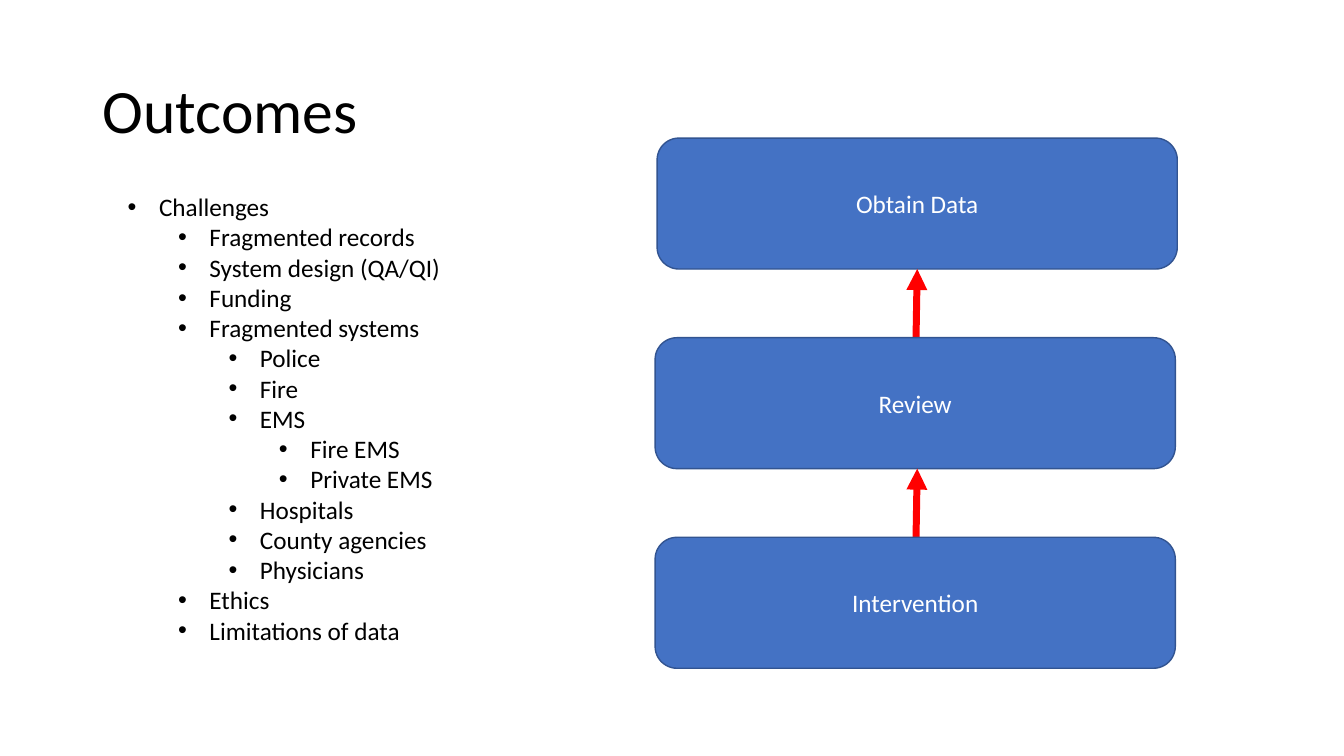
import pptx
import pptx.dml.color
import pptx.enum.shapes
import pptx.enum.text
import pptx.oxml.ns
import pptx.oxml.xmlchemy
import pptx.util

Cm = pptx.util.Cm
Pt = pptx.util.Pt
ANCHOR = pptx.enum.text.MSO_ANCHOR
ALIGN = pptx.enum.text.PP_ALIGN

COLOURS = {
    "text": "000000",
    "step": "4472C4",
    "step_line": "325491",
    "step_text": "FFFFFF",
    "arrow": "FF0000",
}
CHALLENGES = [
    (0, "Challenges"),
    (1, "Fragmented records"),
    (1, "System design (QA/QI)"),
    (1, "Funding"),
    (1, "Fragmented systems"),
    (2, "Police"),
    (2, "Fire"),
    (2, "EMS"),
    (3, "Fire EMS"),
    (3, "Private EMS"),
    (2, "Hospitals"),
    (2, "County agencies"),
    (2, "Physicians"),
    (1, "Ethics"),
    (1, "Limitations of data"),
]
STEPS = [("Obtain Data", 0.05), ("Review", 0), ("Intervention", 0)]


def colour(name):
    return pptx.dml.color.RGBColor.from_string(COLOURS[name])


def add_element(parent, tag, **attributes):
    element = pptx.oxml.xmlchemy.OxmlElement(tag)
    for name, value in attributes.items():
        element.set(name, str(value))
    parent.append(element)


def write(para, text, size=18, ink="text", align=ALIGN.LEFT, spacing=1.0):
    para.alignment = align
    para.line_spacing = spacing
    span = para.add_run()
    span.text = text
    span.font.size = Pt(size)
    span.font.name = "Calibri"
    span.font.color.rgb = colour(ink)


def add_bullet(para, level):
    para.level = level
    properties = para._p.get_or_add_pPr()
    properties.set("marL", str(Cm(0.79 + 1.27 * level)))
    properties.set("indent", str(Cm(-0.79)))
    add_element(properties, "a:buFont", typeface="Arial")
    add_element(properties, "a:buChar", char="•")


def add_text_frame(page, left, top, width, height, anchor):
    box = page.shapes.add_textbox(Cm(left), Cm(top), Cm(width), Cm(height))
    frame = box.text_frame
    frame.word_wrap = True
    frame.vertical_anchor = anchor
    return frame


def draw_title(page, left, top, width, height):
    frame = add_text_frame(page, left, top, width, height, ANCHOR.MIDDLE)
    write(frame.paragraphs[0], "Outcomes", size=44, spacing=0.9)


def draw_challenges(page, left, top, width, height):
    frame = add_text_frame(page, left, top, width, height, ANCHOR.TOP)
    frame.auto_size = pptx.enum.text.MSO_AUTO_SIZE.SHAPE_TO_FIT_TEXT
    for index, (level, text) in enumerate(CHALLENGES):
        para = frame.add_paragraph() if index else frame.paragraphs[0]
        write(para, text)
        add_bullet(para, level)


def draw_step(page, text, left, top, width, height):
    box = page.shapes.add_shape(
        pptx.enum.shapes.MSO_SHAPE.FLOWCHART_ALTERNATE_PROCESS,
        Cm(left), Cm(top), Cm(width), Cm(height))
    box.shadow.inherit = False
    box.fill.solid()
    box.fill.fore_color.rgb = colour("step")
    box.line.color.rgb = colour("step_line")
    box.line.width = Pt(1)
    box.text_frame.vertical_anchor = ANCHOR.MIDDLE
    write(box.text_frame.paragraphs[0], text, ink="step_text", align=ALIGN.CENTER)


def draw_arrow(page, start_x, start_y, end_x, end_y):
    arrow = page.shapes.add_connector(
        pptx.enum.shapes.MSO_CONNECTOR.STRAIGHT,
        Cm(start_x), Cm(start_y), Cm(end_x), Cm(end_y))
    arrow.line.color.rgb = colour("arrow")
    arrow.line.width = Pt(5)
    properties = arrow._element.find(pptx.oxml.ns.qn("p:spPr"))
    add_element(properties.find(pptx.oxml.ns.qn("a:ln")), "a:tailEnd", type="triangle")
    add_element(properties, "a:effectLst")


def draw_steps(page, left, top, width, height):
    step_height = 3.3
    pitch = (height - step_height) / (len(STEPS) - 1)
    middle = left + width / 2
    for index, (text, shift) in enumerate(STEPS):
        step_top = top + index * pitch
        if index:
            draw_arrow(page, middle + 0.02, step_top,
                       middle + 0.05, step_top - pitch + step_height)
        draw_step(page, text, left + shift, step_top, width, step_height)


def main():
    deck = pptx.Presentation()
    deck.slide_width = Cm(33.87)
    deck.slide_height = Cm(19.05)
    page = deck.slides.add_slide(deck.slide_layouts[6])
    draw_title(page, 2.34, 1.02, 29.21, 3.68)
    draw_steps(page, 16.51, 3.48, 13.11, 13.36)
    draw_challenges(page, 2.97, 4.7, 9.98, 11.79)
    deck.save("out.pptx")


if __name__ == "__main__":
    main()
